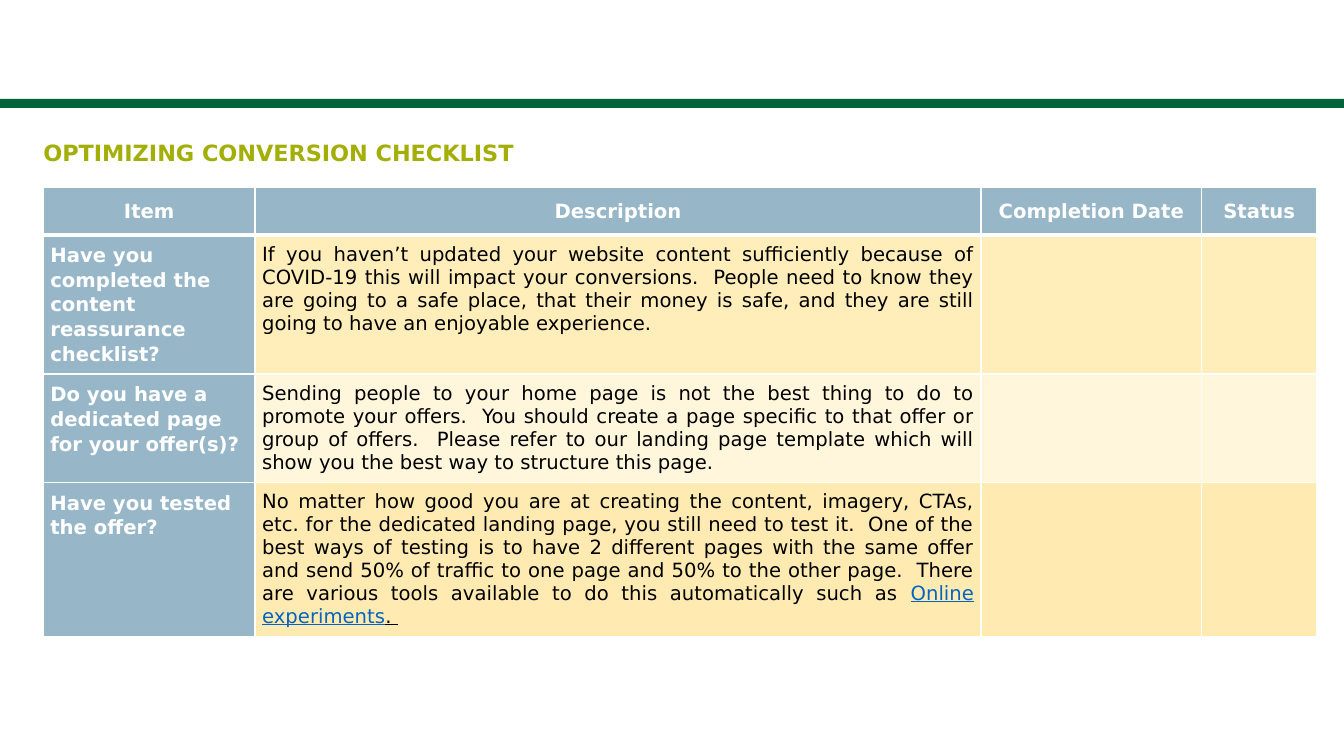
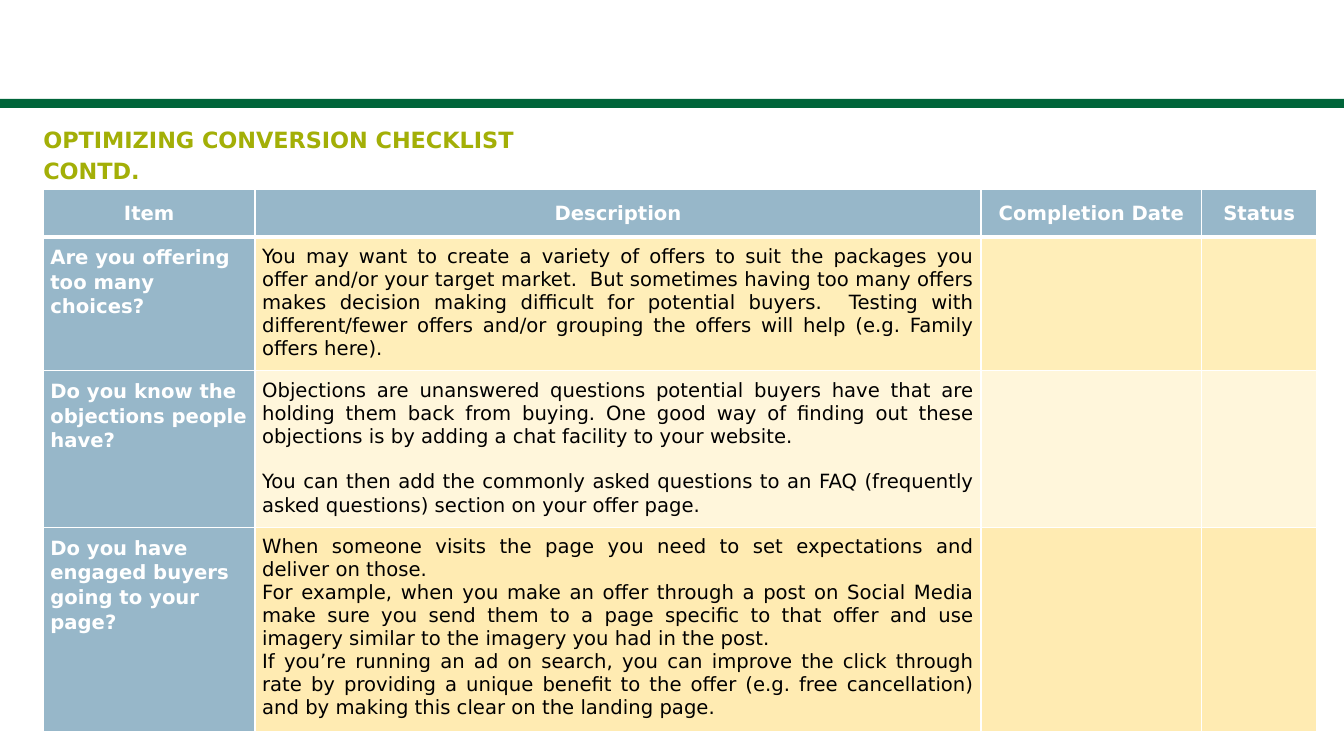
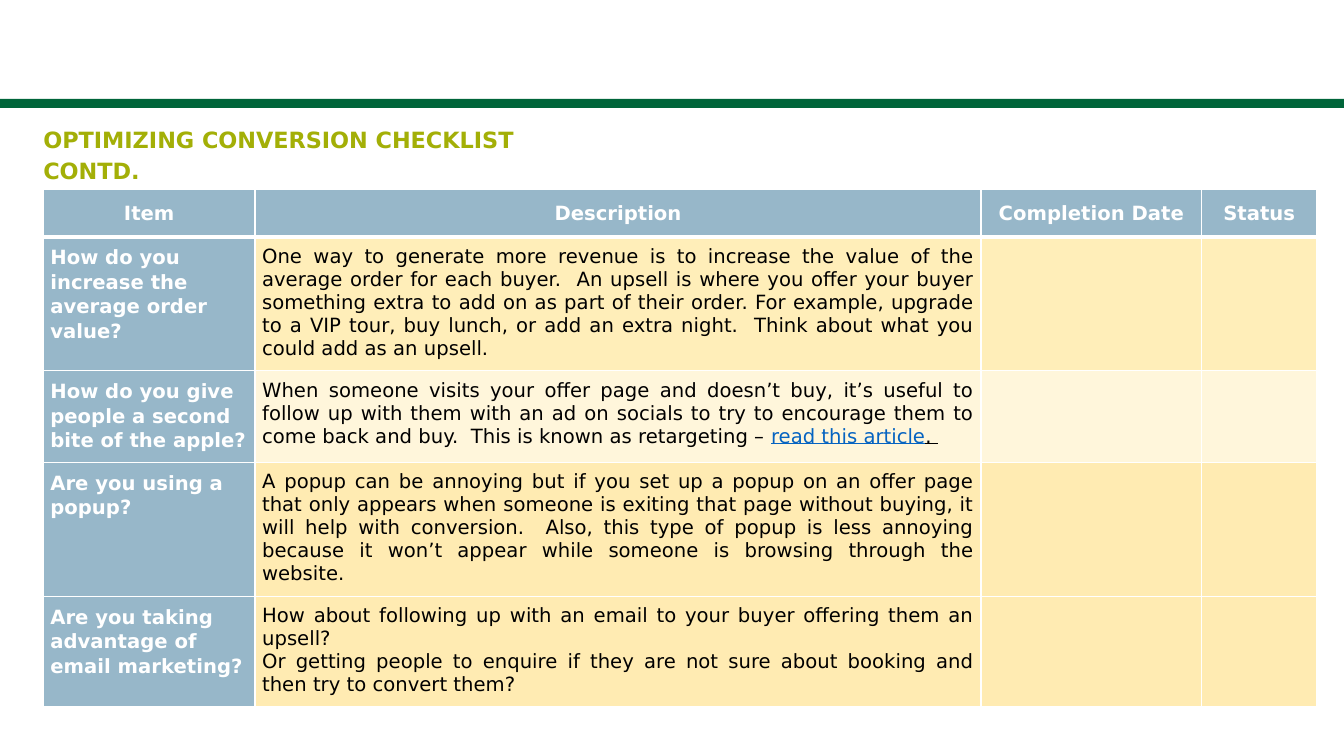
from dataclasses import dataclass

import pptx
import pptx.dml.color
import pptx.enum.shapes
import pptx.enum.text
import pptx.oxml
import pptx.oxml.ns
import pptx.util

Inches = pptx.util.Inches
Points = pptx.util.Pt
ALIGN = pptx.enum.text.PP_ALIGN
ANCHOR = pptx.enum.text.MSO_ANCHOR

SLIDE_WIDTH, SLIDE_HEIGHT = 13.33, 7.5
MARGIN_LEFT = 0.43
FONT = "DejaVu Sans"
TEXT_SIZE, TITLE_SIZE = 14, 16
LOOSE_SPACING = 1.07
BLANK_LAYOUT = 6

COLORS = {
    "band": "00653A",
    "title": "A3AF07",
    "blue": "317195",
    "cream": "FFEEB9",
    "gold": "FFD966",
    "white": "FFFFFF",
    "black": "000000",
    "link": "0563C1",
}

COLUMN_WIDTHS = (2.1, 7.2, 2.19, 1.14)
HEADINGS = ("Item", "Description", "Completion Date", "Status")
HEADER_HEIGHT = 0.47


@dataclass(frozen=True)
class Tint:
    color: str
    opacity: int = 100


ITEM_TINT = Tint("blue", 50)
ROW_TINTS = (Tint("cream"), Tint("cream", 50), Tint("gold", 50), Tint("gold", 50))


@dataclass(frozen=True)
class Span:
    text: str
    color: str = "black"
    size: int = TEXT_SIZE
    bold: bool = False
    underline: bool = False


@dataclass(frozen=True)
class TextBlock:
    spans: tuple[Span, ...]
    align: ALIGN = ALIGN.LEFT
    line_spacing: float = 1.0
    space_before: float = 0


@dataclass(frozen=True)
class Check:
    item: str
    height: float
    description: tuple[TextBlock, ...]


@dataclass(frozen=True)
class Checklist:
    title: tuple[str, ...]
    title_top: float
    title_height: float
    table_top: float
    checks: tuple[Check, ...]


def prose(text: str, link: str = "", space_before: float = 0) -> TextBlock:
    """Justified description, optionally closed by an underlined link."""
    spans = (Span(text),)
    if link:
        spans += (Span(link, "link", underline=True), Span(". ", underline=True))
    return TextBlock(spans, ALIGN.JUSTIFY, space_before=space_before)


def label(text: str, align: ALIGN = ALIGN.LEFT) -> TextBlock:
    return TextBlock((Span(text, "white", bold=True),), align, LOOSE_SPACING)


CONTINUED = ("OPTIMIZING CONVERSION CHECKLIST", "CONTD.")

CHECKLISTS = (
    Checklist(CONTINUED[:1], 1.36, 0.26, 1.86, (
        Check("Have you completed the content reassurance checklist?", 1.37, (
            prose("If you haven’t updated your website content sufficiently because of "
                  "COVID-19 this will impact your conversions.  People need to know they "
                  "are going to a safe place, that their money is safe, and they are still "
                  "going to have an enjoyable experience."),)),
        Check("Do you have a dedicated page for your offer(s)?", 1.07, (
            prose("Sending people to your home page is not the best thing to do to promote "
                  "your offers.  You should create a page specific to that offer or group "
                  "of offers.  Please refer to our landing page template which will show "
                  "you the best way to structure this page."),)),
        Check("Have you tested the offer?", 1.52, (
            prose("No matter how good you are at creating the content, imagery, CTAs, etc. "
                  "for the dedicated landing page, you still need to test it.  One of the "
                  "best ways of testing is to have 2 different pages with the same offer "
                  "and send 50% of traffic to one page and 50% to the other page.  There "
                  "are various tools available to do this automatically such as ",
                  "Online experiments"),)),
    )),
    Checklist(CONTINUED, 1.23, 0.58, 1.88, (
        Check("Are you offering too many choices?", 1.29, (
            prose("You may want to create a variety of offers to suit the packages you "
                  "offer and/or your target market.  But sometimes having too many offers "
                  "makes decision making difficult for potential buyers.  Testing with "
                  "different/fewer offers and/or grouping the offers will help (e.g. "
                  "Family offers here)."),)),
        Check("Do you know the objections people have?", 1.53, (
            prose("Objections are unanswered questions potential buyers have that are "
                  "holding them back from buying. One good way of finding out these "
                  "objections is by adding a chat facility to your website."),
            prose("You can then add the commonly asked questions to an FAQ (frequently "
                  "asked questions) section on your offer page.", space_before=16.4))),
        Check("Do you have engaged buyers going to your page?", 1.98, (
            prose("When someone visits the page you need to set expectations and deliver "
                  "on those."),
            prose("For example, when you make an offer through a post on Social Media make "
                  "sure you send them to a page specific to that offer and use imagery "
                  "similar to the imagery you had in the post."),
            prose("If you’re running an ad on search, you can improve the click through "
                  "rate by providing a unique benefit to the offer (e.g. free "
                  "cancellation) and by making this clear on the landing page."))),
    )),
    Checklist(CONTINUED, 1.23, 0.58, 1.88, (
        Check("How do you increase the average order value?", 1.29, (
            prose("One way to generate more revenue is to increase the value of the "
                  "average order for each buyer.  An upsell is where you offer your buyer "
                  "something extra to add on as part of their order. For example, upgrade "
                  "to a VIP tour, buy lunch, or add an extra night.  Think about what you "
                  "could add as an upsell."),)),
        Check("How do you give people a second bite of the apple?", 0.9, (
            prose("When someone visits your offer page and doesn’t buy, it’s useful to "
                  "follow up with them with an ad on socials to try to encourage them to "
                  "come back and buy.  This is known as retargeting – ",
                  "read this article"),)),
        Check("Are you using a popup?", 1.29, (
            prose("A popup can be annoying but if you set up a popup on an offer page that "
                  "only appears when someone is exiting that page without buying, it will "
                  "help with conversion.  Also, this type of popup is less annoying "
                  "because it won’t appear while someone is browsing through the "
                  "website."),)),
        Check("Are you taking advantage of email marketing?", 1.07, (
            prose("How about following up with an email to your buyer offering them an "
                  "upsell?"),
            prose("Or getting people to enquire if they are not sure about booking and "
                  "then try to convert them?"))),
    )),
)


def rgb(name: str) -> pptx.dml.color.RGBColor:
    return pptx.dml.color.RGBColor.from_string(COLORS[name])


def write_blocks(text_frame, blocks: tuple[TextBlock, ...]) -> None:
    for index, block in enumerate(blocks):
        paragraph = text_frame.add_paragraph() if index else text_frame.paragraphs[0]
        paragraph.alignment = block.align
        paragraph.line_spacing = block.line_spacing
        if block.space_before:
            paragraph.space_before = Points(block.space_before)
        for span in block.spans:
            run = paragraph.add_run()
            run.text = span.text
            run.font.name = FONT
            run.font.size = Points(span.size)
            run.font.bold = span.bold
            run.font.underline = span.underline
            run.font.color.rgb = rgb(span.color)


def style_cell(cell, tint: Tint, row: int) -> None:
    """Fill the cell and rule it in white, with a heavier rule under the header."""
    cell.fill.solid()
    cell.fill.fore_color.rgb = rgb(tint.color)
    properties = cell._tc.get_or_add_tcPr()
    if tint.opacity < 100:
        color = properties.find(".//" + pptx.oxml.ns.qn("a:srgbClr"))
        alpha = pptx.oxml.parse_xml(
            f'<a:alpha {pptx.oxml.ns.nsdecls("a")} val="{tint.opacity * 1000}"/>')
        color.append(alpha)
    for index, side in enumerate("LRTB"):
        heavy = (row, side) in ((0, "B"), (1, "T"))
        border = pptx.oxml.parse_xml(
            f'<a:ln{side} {pptx.oxml.ns.nsdecls("a")} w="{Points(3 if heavy else 1)}">'
            f'<a:solidFill><a:srgbClr val="{COLORS["white"]}"/></a:solidFill></a:ln{side}>')
        properties.insert(index, border)


def set_margins(cell, vertical: float) -> None:
    cell.margin_left = cell.margin_right = Inches(0.07)
    cell.margin_top = cell.margin_bottom = Inches(vertical)


def add_band(slide) -> None:
    band = slide.shapes.add_shape(
        pptx.enum.shapes.MSO_SHAPE.RECTANGLE,
        0, Inches(0.98), Inches(SLIDE_WIDTH), Inches(0.09))
    band.shadow.inherit = False
    band.fill.solid()
    band.fill.fore_color.rgb = rgb("band")
    band.line.fill.background()


def add_title(slide, checklist: Checklist) -> None:
    box = slide.shapes.add_textbox(
        Inches(MARGIN_LEFT), Inches(checklist.title_top),
        Inches(8.58), Inches(checklist.title_height))
    frame = box.text_frame
    frame.word_wrap = True
    frame.auto_size = pptx.enum.text.MSO_AUTO_SIZE.SHAPE_TO_FIT_TEXT
    frame.margin_left = frame.margin_right = frame.margin_top = frame.margin_bottom = 0
    write_blocks(frame, tuple(
        TextBlock((Span(line, "title", TITLE_SIZE, bold=True),),
                  line_spacing=LOOSE_SPACING, space_before=2 if index else 0)
        for index, line in enumerate(checklist.title)))


def add_check_table(slide, checklist: Checklist) -> None:
    heights = (HEADER_HEIGHT, *(check.height for check in checklist.checks))
    table = slide.shapes.add_table(
        len(heights), len(COLUMN_WIDTHS),
        Inches(MARGIN_LEFT), Inches(checklist.table_top),
        Inches(sum(COLUMN_WIDTHS)), Inches(sum(heights))).table
    table.horz_banding = False
    for column, width in zip(table.columns, COLUMN_WIDTHS):
        column.width = Inches(width)
    for row, height in zip(table.rows, heights):
        row.height = Inches(height)

    for column, heading in enumerate(HEADINGS):
        cell = table.cell(0, column)
        style_cell(cell, ITEM_TINT, 0)
        set_margins(cell, 0)
        cell.vertical_anchor = ANCHOR.MIDDLE
        write_blocks(cell.text_frame, (label(heading, ALIGN.CENTER),))

    for row, (check, tint) in enumerate(zip(checklist.checks, ROW_TINTS), start=1):
        contents = ((label(check.item),), check.description, (), ())
        for column, blocks in enumerate(contents):
            cell = table.cell(row, column)
            style_cell(cell, tint if column else ITEM_TINT, row)
            set_margins(cell, 0.08)
            write_blocks(cell.text_frame, blocks)


def main() -> None:
    presentation = pptx.Presentation()
    presentation.slide_width = Inches(SLIDE_WIDTH)
    presentation.slide_height = Inches(SLIDE_HEIGHT)
    for checklist in CHECKLISTS:
        slide = presentation.slides.add_slide(presentation.slide_layouts[BLANK_LAYOUT])
        add_band(slide)
        add_check_table(slide, checklist)
        add_title(slide, checklist)
    presentation.save("out.pptx")


if __name__ == "__main__":
    main()
